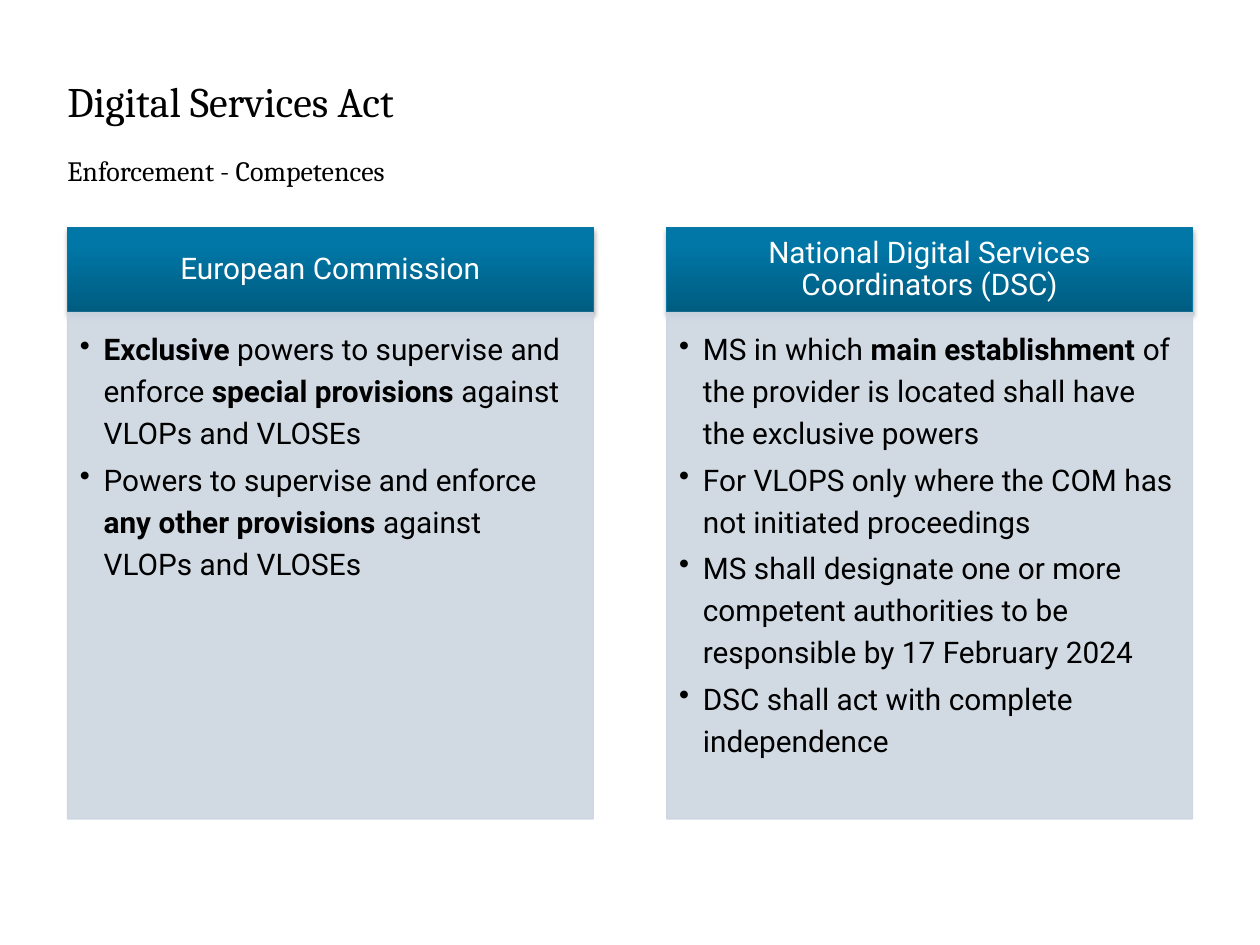
from dataclasses import dataclass

from lxml import etree
from pptx import Presentation
from pptx import util as u
from pptx.dml.color import RGBColor
from pptx.enum import shapes, text
from pptx.oxml.ns import qn


@dataclass(frozen=True)
class Theme:
    """Colours, fonts and type sizes of the slide."""
    ink: str = "000000"
    light: str = "FFFFFF"
    panel: str = "CCD6E1"
    panel_alpha: int = 90
    header_line: str = "0778A5"
    header_stops: tuple = ((0, "005C80"), (80, "0077A7"), (100, "0078A7"))
    shadow_alpha: int = 35
    heading_font: str = "Cambria"
    body_font: str = "Roboto"
    title_size: int = 24
    subtitle_size: int = 16
    body_size: int = 17


THEME = Theme()

COLUMNS = [
    ("European Commission", [
        [("Exclusive", True), (" powers to supervise and enforce ", False),
         ("special provisions ", True), ("against VLOPs and VLOSEs", False)],
        [("Powers to supervise and enforce ", False),
         ("any other provisions ", True), ("against VLOPs and VLOSEs", False)],
    ]),
    ("National Digital Services Coordinators (DSC)", [
        [("MS in which ", False), ("main establishment ", True),
         ("of the provider is located shall have the exclusive powers", False)],
        [("For VLOPS only where the COM has not initiated proceedings", False)],
        [("MS shall designate one or more competent authorities to be "
          "responsible by 17 February 2024", False)],
        [("DSC shall act with complete independence", False)],
    ]),
]


def add_element(parent, tag, **attributes):
    """Append a DrawingML element and return it."""
    values = {key: str(value) for key, value in attributes.items()}
    return etree.SubElement(parent, qn(tag), values)


def add_color(parent, color, alpha=100):
    """Append an RGB colour with an opacity in percent."""
    node = add_element(parent, "a:srgbClr", val=color)
    if alpha < 100:
        add_element(node, "a:alpha", val=alpha * 1000)


def add_run(p, content, size, font, color, bold=False):
    """Add one formatted run to a paragraph."""
    r = p.add_run()
    r.text = content
    r.font.size = u.Pt(size)
    r.font.name = font
    r.font.bold = bold
    r.font.color.rgb = RGBColor.from_string(color)


def set_frame(tf, insets, anchor):
    """Set wrapping, insets in centimetres and vertical anchor."""
    tf.word_wrap = True
    tf.vertical_anchor = anchor
    tf.margin_left, tf.margin_top, tf.margin_right, tf.margin_bottom = map(u.Cm, insets)


def add_panel(slide, box, line_color):
    """Add a thinly outlined rectangle without a shadow."""
    sp = slide.shapes.add_shape(shapes.MSO_SHAPE.RECTANGLE, *map(u.Cm, box))
    sp.shadow.inherit = False
    sp.line.color.rgb = RGBColor.from_string(line_color)
    sp.line.width = u.Pt(0.75)
    return sp


def style_header(sp):
    """Give a header its vertical gradient and soft shadow."""
    sp.fill.gradient()
    sp.fill.gradient_angle = 90
    stops = sp.element.spPr.find(".//" + qn("a:gsLst"))
    for stop in list(stops):
        stops.remove(stop)
    for position, color in THEME.header_stops:
        add_color(add_element(stops, "a:gs", pos=position * 1000), color)
    effects = sp.element.spPr.find(qn("a:effectLst"))
    shadow = add_element(effects, "a:outerShdw", blurRad=u.Pt(3.1), dist=u.Pt(1.8),
                         dir=90 * 60000, rotWithShape=0)
    add_color(shadow, THEME.ink, THEME.shadow_alpha)


def add_header(slide, box, label):
    """Draw the header bar of a column."""
    sp = add_panel(slide, box, THEME.header_line)
    style_header(sp)
    set_frame(sp.text_frame, (0.33, 0.2, 0.33, 0.2), text.MSO_ANCHOR.MIDDLE)
    p = sp.text_frame.paragraphs[0]
    p.alignment = text.PP_ALIGN.CENTER
    p.line_spacing = 0.9
    add_run(p, label, THEME.body_size, THEME.body_font, THEME.light)


def add_bullets(slide, box, items):
    """Draw the translucent body of a column with its bullets."""
    sp = add_panel(slide, box, THEME.panel)
    sp.fill.solid()
    sp.fill.fore_color.rgb = RGBColor.from_string(THEME.panel)
    for color in sp.element.spPr.iter(qn("a:srgbClr")):
        add_element(color, "a:alpha", val=THEME.panel_alpha * 1000)
    tf = sp.text_frame
    set_frame(tf, (0.25, 0.25, 0.33, 0.38), text.MSO_ANCHOR.TOP)
    for index, runs in enumerate(items):
        p = tf.add_paragraph() if index else tf.paragraphs[0]
        props = p._p.get_or_add_pPr()
        props.set("marL", str(u.Cm(0.48)))
        props.set("indent", str(u.Cm(-0.48)))
        add_element(props, "a:buChar", char="•")
        p.alignment = text.PP_ALIGN.LEFT
        p.line_spacing = u.Pt(24)
        p.space_after = u.Pt(2.5)
        for content, bold in runs:
            add_run(p, content, THEME.body_size, THEME.body_font, THEME.ink, bold)


def add_title(slide, box, title, subtitle):
    """Write the title with the subtitle on the line below."""
    tf = slide.shapes.add_textbox(*map(u.Cm, box)).text_frame
    set_frame(tf, (0, 0, 0, 0), text.MSO_ANCHOR.TOP)
    p = tf.paragraphs[0]
    p.line_spacing = u.Pt(35)
    add_run(p, title, THEME.title_size, THEME.heading_font, THEME.ink)
    p.add_line_break()
    add_run(p, subtitle, THEME.subtitle_size, THEME.heading_font, THEME.ink)


def add_column(slide, box, label, items):
    """Stack a header and a bulleted body inside the box."""
    left, top, width, height = box
    header_height = 1.72
    add_header(slide, (left, top, width, header_height), label)
    add_bullets(slide, (left, top + header_height, width, height - header_height), items)


def add_comparison(slide, box, columns, gap):
    """Divide the box into equal columns."""
    left, top, width, height = box
    column_width = (width - gap * (len(columns) - 1)) / len(columns)
    for index, (label, items) in enumerate(columns):
        column_left = left + index * (column_width + gap)
        add_column(slide, (column_left, top, column_width, height), label, items)


def main():
    """Build and save the slide."""
    prs = Presentation()
    prs.slide_width, prs.slide_height = u.Cm(25.4), u.Cm(19.05)
    slide = prs.slides.add_slide(prs.slide_layouts[6])
    add_title(slide, (1.36, 1.3, 15.54, 2.64), "Digital Services Act",
              "Enforcement - Competences")
    add_comparison(slide, (1.36, 4.58, 22.68, 11.93), COLUMNS, gap=1.48)
    prs.save("out.pptx")


if __name__ == "__main__":
    main()
